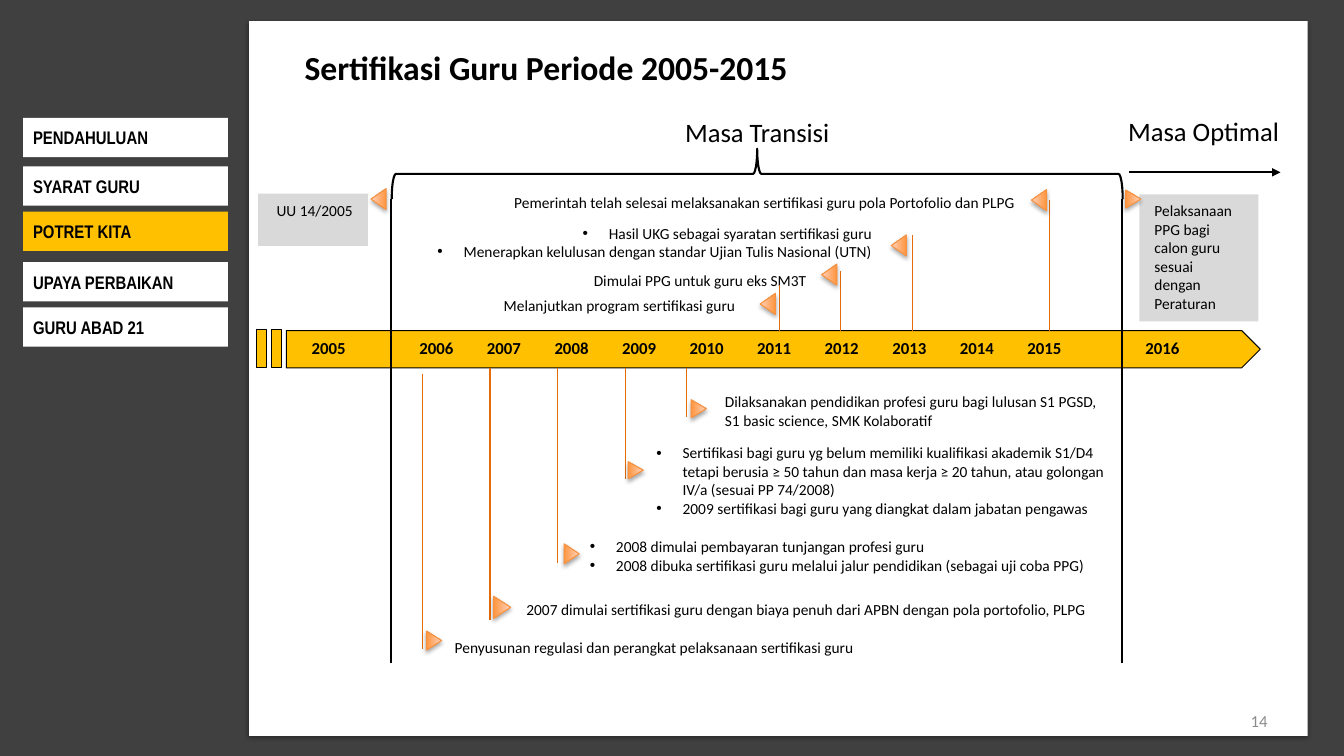
import pptx
import pptx.util
from lxml import etree
from pptx.dml.color import RGBColor
from pptx.enum.shapes import MSO_CONNECTOR, MSO_SHAPE
from pptx.enum.text import MSO_ANCHOR, MSO_AUTO_SIZE, PP_ALIGN
from pptx.oxml.ns import qn

COLOR = {
    "backdrop": "404040", "white": "FFFFFF", "black": "000000",
    "amber": "FFC000", "card": "D9D9D9", "stem": "E46C0A",
    "flag_edge": "F69240", "flag_dark": "FF953E", "flag_light": "FFD2BD",
    "page": "8C8C8C",
}
RGB = {name: RGBColor.from_string(value) for name, value in COLOR.items()}
Inches, Pt = pptx.util.Inches, pptx.util.Pt
LEFT, CENTER, RIGHT = PP_ALIGN.LEFT, PP_ALIGN.CENTER, PP_ALIGN.RIGHT

BAND_TOP, BAND_HEIGHT = 3.28, 0.37
BAND_BOTTOM = BAND_TOP + BAND_HEIGHT
YEAR_LEFT, YEAR_PITCH = 4.01, 0.67
PERIOD_START, PERIOD_END = 3.88, 11.13
BULLET_INDENT = 0.26

prs = pptx.Presentation()
prs.slide_width, prs.slide_height = Inches(13.33), Inches(7.5)
slide = prs.slides.add_slide(prs.slide_layouts[5])
slide.background.fill.solid()
slide.background.fill.fore_color.rgb = RGB["backdrop"]
shapes = slide.shapes


def draw(kind, box, fill=None, edge=None, weight=0.75, shadow=None):
    """Add a preset shape; shadow is (opacity %, blur pt, distance pt)."""
    shape = shapes.add_shape(kind, *map(Inches, box))
    shape.shadow.inherit = False
    if fill:
        shape.fill.solid()
        shape.fill.fore_color.rgb = RGB[fill]
    else:
        shape.fill.background()
    if edge:
        shape.line.color.rgb = RGB[edge]
        shape.line.width = Pt(weight)
    else:
        shape.line.fill.background()
    if shadow:
        opacity, blur, distance = shadow
        effects = shape.element.spPr.find(qn("a:effectLst"))
        outer = etree.SubElement(effects, qn("a:outerShdw"), blurRad=str(Pt(blur)),
                                 dist=str(Pt(distance)), dir="5400000", rotWithShape="0")
        tint = etree.SubElement(outer, qn("a:srgbClr"), val=COLOR["black"])
        etree.SubElement(tint, qn("a:alpha"), val=str(opacity * 1000))
    return shape


def write(shape, entries, size, align=LEFT, bold=False, font="Calibri", color="black",
          inset=(0.15, 0.07), anchor=MSO_ANCHOR.TOP, wrap=True):
    """Fill a shape with paragraphs; several entries become a bulleted list."""
    frame = shape.text_frame
    frame.word_wrap = wrap
    frame.vertical_anchor = anchor
    frame.margin_left = frame.margin_right = Inches(inset[0])
    frame.margin_top = frame.margin_bottom = Inches(inset[1])
    frame.text = "\n".join(entries)
    for paragraph in frame.paragraphs:
        paragraph.alignment = align
        for run in paragraph.runs:
            run.font.size, run.font.bold, run.font.name = Pt(size), bold, font
            run.font.color.rgb = RGB[color]
        if len(entries) > 1:
            props = paragraph._p.get_or_add_pPr()
            props.set("marL", str(Inches(BULLET_INDENT)))
            props.set("indent", str(-Inches(BULLET_INDENT)))
            etree.SubElement(props, qn("a:buFont"), typeface="Arial")
            etree.SubElement(props, qn("a:buChar"), char="•")


# Page panel, title and page number
title = shapes.title
panel = draw(MSO_SHAPE.RECTANGLE, (2.47, 0.21, 10.5, 7.09), "white", shadow=(38, 3.1, 1.6))
title.element.addprevious(panel.element)
title.left, title.top, title.width, title.height = map(Inches, (2.89, 0.39, 5.8, 0.54))
write(title, ["Sertifikasi Guru Periode 2005-2015"], 24, bold=True, inset=(0.13, 0.07))
title.text_frame.auto_size = MSO_AUTO_SIZE.NONE
page_number = shapes.add_textbox(*map(Inches, (9.56, 6.95, 3.11, 0.4)))
write(page_number, ["14"], 12, RIGHT, color="page", inset=(0.1, 0.05), anchor=MSO_ANCHOR.MIDDLE)

# Chapter menu
chapters = [("PENDAHULUAN", 1.17), ("SYARAT GURU", 1.65), ("POTRET KITA", 2.1),
            ("UPAYA PERBAIKAN", 2.6), ("GURU ABAD 21", 3.05)]
for chapter, top in chapters:
    fill = "amber" if chapter == "POTRET KITA" else "white"
    button = draw(MSO_SHAPE.RECTANGLE, (0.23, top, 2.03, 0.39), fill)
    write(button, [chapter], 13, bold=True, font="Arial Narrow", inset=(0.1, 0.05),
          anchor=MSO_ANCHOR.MIDDLE)

# Time band with its years
draw(MSO_SHAPE.PENTAGON, (2.84, BAND_TOP, 9.66, BAND_HEIGHT), "amber", "black")
for left in (2.54, 2.69):
    draw(MSO_SHAPE.RECTANGLE, (left, 3.27, 0.1, 0.38), "amber", "black")
year_lefts = {year: YEAR_LEFT + YEAR_PITCH * (year - 2006) for year in range(2006, 2016)}
year_lefts.update({2005: 2.94, 2016: 11.21})
for year, left in year_lefts.items():
    label = shapes.add_textbox(*map(Inches, (left, BAND_TOP, YEAR_PITCH, 0.35)))
    write(label, [str(year)], 12, bold=True, wrap=False)
    label.text_frame.auto_size = MSO_AUTO_SIZE.SHAPE_TO_FIT_TEXT

# Milestones: stem x, stem end y, flag (left, top, width, height), text box, entries
milestones = [
    (4.19, 6.44, (4.21, 6.28, 0.19, 0.15), (4.36, 6.26, 5.26, 0.33),
     ["Penyusunan regulasi dan perangkat pelaksanaan sertifikasi guru"]),
    (4.86, 6.15, (4.87, 5.94, 0.22, 0.17), (5.07, 5.88, 5.99, 0.52),
     ["2007 dimulai sertifikasi guru dengan biaya penuh dari APBN dengan pola portofolio, PLPG"]),
    (5.53, 5.59, (5.57, 5.42, 0.2, 0.15), (5.7, 5.26, 5.44, 0.7),
     ["2008 dimulai pembayaran tunjangan profesi guru",
      "2008 dibuka sertifikasi guru melalui jalur pendidikan (sebagai uji coba PPG)"]),
    (6.2, 4.75, (6.22, 4.59, 0.17, 0.15), (6.36, 4.33, 4.78, 1.07),
     ["Sertifikasi bagi guru yg belum memiliki kualifikasi akademik S1/D4 tetapi berusia "
      "≥ 50 tahun dan masa kerja ≥ 20 tahun, atau golongan IV/a (sesuai PP 74/2008)",
      "2009 sertifikasi bagi guru yang diangkat dalam jabatan pengawas"]),
    (6.81, 4.14, (6.84, 3.98, 0.18, 0.15), (7.04, 3.82, 4.1, 0.52),
     ["Dilaksanakan pendidikan profesi guru bagi lulusan S1 PGSD, S1 basic science, "
      "SMK Kolaboratif"]),
    (7.73, 2.83, (7.51, 2.94, 0.21, 0.15), (4, 2.87, 3.48, 0.33),
     ["Melanjutkan program sertifikasi guru "]),
    (8.34, 2.69, (8.12, 2.65, 0.21, 0.15), (4.67, 2.62, 3.48, 0.33),
     ["Dimulai PPG untuk guru eks SM3T"]),
    (9.05, 2.33, (8.81, 2.36, 0.21, 0.15), (3.68, 2.15, 5.12, 0.52),
     ["Hasil UKG sebagai syaratan sertifikasi guru",
      "Menerapkan kelulusan dengan standar Ujian Tulis Nasional (UTN)"]),
    (10.41, 1.98, (10.2, 1.91, 0.21, 0.15), (4.42, 1.85, 5.8, 0.33),
     ["Pemerintah telah selesai melaksanakan sertifikasi guru pola Portofolio dan PLPG"]),
]
lines = [((x, 6.58), (x, 1.97), "black", 1.5) for x in (PERIOD_START, PERIOD_END)]
flags = [((3.65, 1.9, 0.21, 0.15), 270), ((11.15, 1.9, 0.18, 0.15), 90)]
for x, stem_end, flag_box, text_box, entries in milestones:
    above = stem_end < BAND_TOP
    start = BAND_TOP if above else 3.71 if x == 4.19 else BAND_BOTTOM
    lines.append(((x, start), (x, stem_end), "stem", 0.75))
    flags.append((flag_box, 270 if above else 90))
    note = shapes.add_textbox(*map(Inches, text_box))
    write(note, entries, 11, RIGHT if above else LEFT)
    note.text_frame.auto_size = MSO_AUTO_SIZE.SHAPE_TO_FIT_TEXT

# Period headings, brace and outer cards
headings = [("Masa Transisi", (6.55, 1.08, 1.92, 0.45), CENTER),
            ("Masa Optimal", (11.06, 1.07, 1.92, 0.45), LEFT)]
for heading, box, align in headings:
    period = shapes.add_textbox(*map(Inches, box))
    write(period, [heading], 19, align, inset=(0.13, 0.07))
span = PERIOD_END - PERIOD_START
brace = draw(MSO_SHAPE.RIGHT_BRACE, (7.26, -1.9, 0.5, span), edge="black", weight=1.5)
brace.rotation = 270
cards = [("UU 14/2005", (2.56, 1.92, 1.09, 0.52), RIGHT),
         ("Pelaksanaan PPG bagi calon guru sesuai dengan Peraturan",
          (11.3, 1.93, 1.18, 1.26), LEFT)]
for wording, box, align in cards:
    write(draw(MSO_SHAPE.RECTANGLE, box, "card"), [wording], 11, align)

# Stems, period limits and the closing arrow
lines.append(((11.2, 1.71), (12.7, 1.71), "black", 1.5))
for start, end, color, weight in lines:
    line = shapes.add_connector(MSO_CONNECTOR.STRAIGHT, *map(Inches, start + end))
    line.line.color.rgb = RGB[color]
    line.line.width = Pt(weight)
    etree.SubElement(line.element.spPr, qn("a:effectLst"))
optimal_arrow = line.element.spPr.find(qn("a:ln"))
etree.SubElement(optimal_arrow, qn("a:tailEnd"), type="triangle")

for box, rotation in flags:
    flag = draw(MSO_SHAPE.ISOSCELES_TRIANGLE, box, edge="flag_edge", shadow=(35, 3.1, 1.8))
    flag.rotation = rotation
    flag.fill.gradient()
    flag.fill.gradient_angle = 90
    for stop, color in zip(flag.fill.gradient_stops, ("flag_dark", "flag_light")):
        stop.color.rgb = RGB[color]

prs.save("out.pptx")
